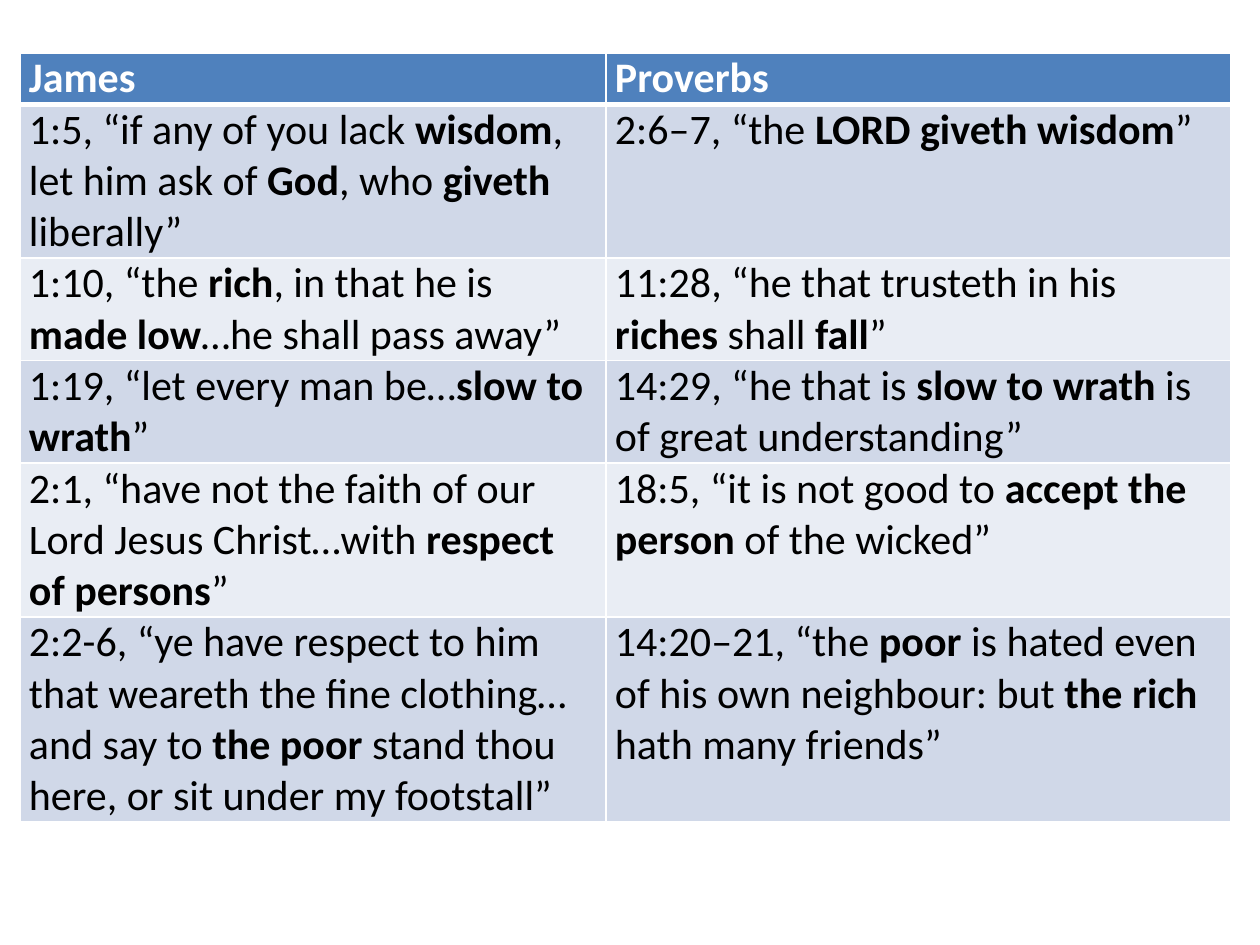
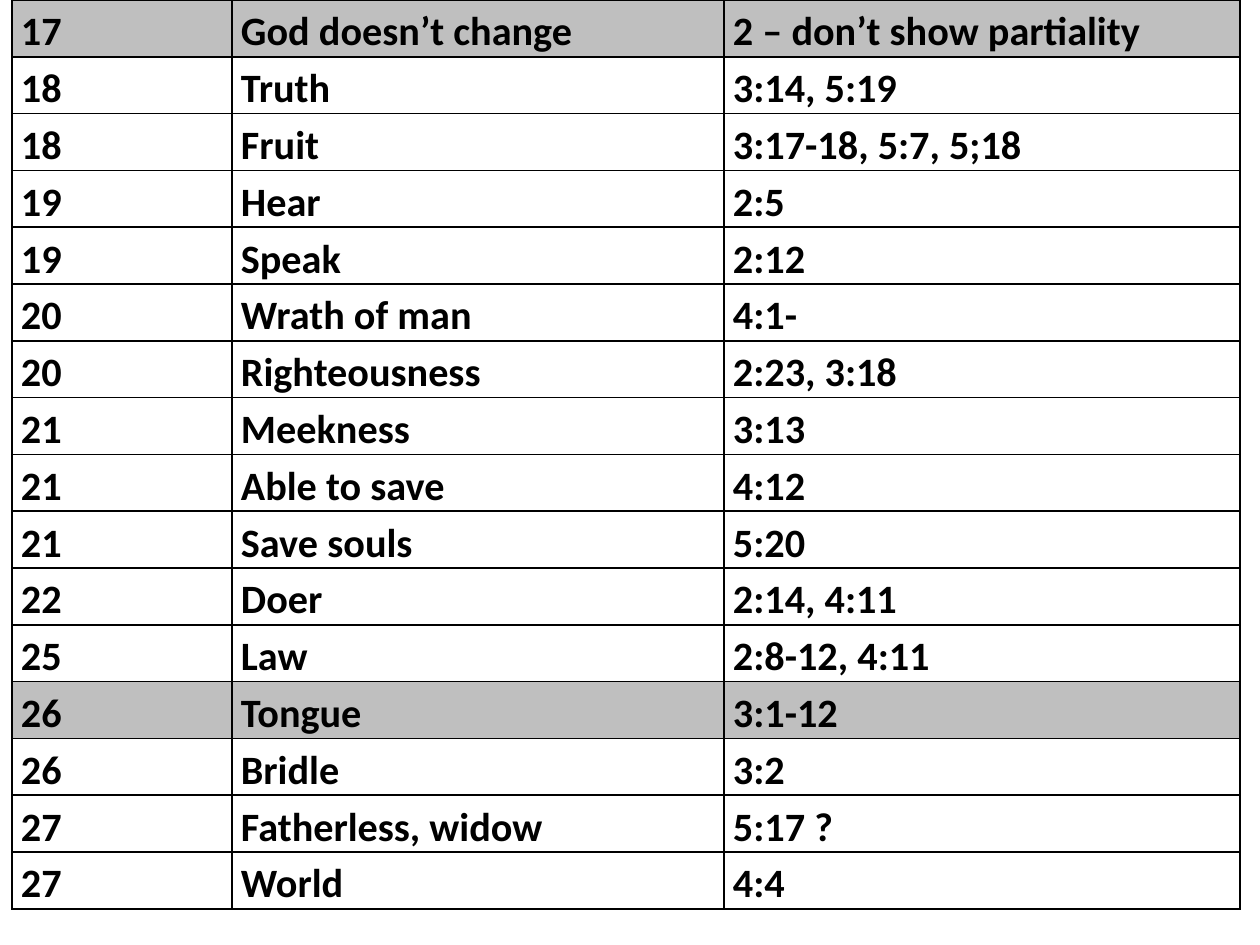
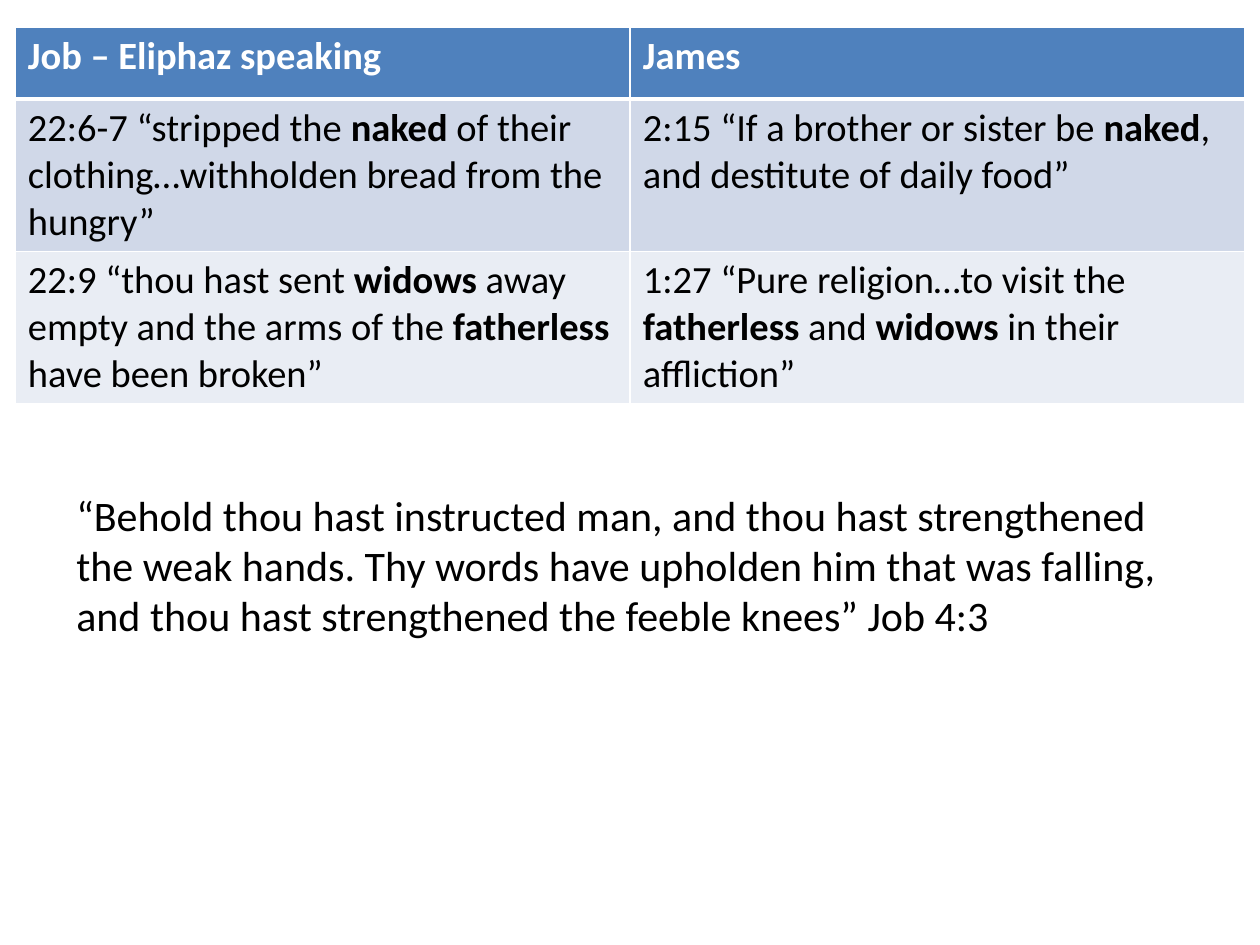
from dataclasses import dataclass

from lxml.etree import SubElement
from pptx import Presentation
from pptx.dml.color import RGBColor
from pptx.enum.text import MSO_AUTO_SIZE
from pptx.oxml.ns import qn
from pptx.util import Emu, Pt

PX_PER_INCH = 126
FONT = "Calibri"
BOLD_MARK = "*"

WHITE = RGBColor(0xFF, 0xFF, 0xFF)
BLACK = RGBColor(0x00, 0x00, 0x00)
HEADER_BLUE = RGBColor(0x4F, 0x81, 0xBD)
BAND_DARK = RGBColor(0xD0, 0xD8, 0xE8)
BAND_LIGHT = RGBColor(0xE9, 0xED, 0xF4)
HIGHLIGHT = RGBColor(0xBF, 0xBF, 0xBF)


@dataclass(frozen=True)
class RowLook:
    fill: RGBColor
    color: RGBColor = BLACK
    bold: bool = False
    top: int = 1
    bottom: int = 1


@dataclass(frozen=True)
class TableSpec:
    left: int
    top: int
    columns: list[int]
    heights: list[int]
    rows: list[tuple[str, ...]]
    looks: list[RowLook]
    border: RGBColor
    size: int
    side_margin: int = 9
    end_margin: int = 0
    line_spacing: float = 1.0
    has_header: bool = False


def px(length: int) -> Emu:
    return Emu(round(length * 914400 / PX_PER_INCH))


def write_text(paragraph, text: str, size: int, color: RGBColor, bold: bool = False) -> None:
    """Write text whose passages between asterisks are bold."""
    for index, passage in enumerate(text.split(BOLD_MARK)):
        if passage:
            span = paragraph.add_run()
            span.text = passage
            span.font.name = FONT
            span.font.size = Pt(size)
            span.font.color.rgb = color
            span.font.bold = bold or index % 2 == 1


def set_borders(cell, color: RGBColor, top: int, bottom: int) -> None:
    """Add border lines; call before filling, as the schema puts lines first."""
    properties = cell._tc.get_or_add_tcPr()
    for side, width in (("L", 1), ("R", 1), ("T", top), ("B", bottom)):
        line = SubElement(properties, qn(f"a:ln{side}"), w=str(Pt(width)))
        fill = SubElement(line, qn("a:solidFill"))
        SubElement(fill, qn("a:srgbClr"), val=str(color))


def draw_table(page, spec: TableSpec) -> None:
    frame = page.shapes.add_table(
        len(spec.rows), len(spec.columns), px(spec.left), px(spec.top),
        px(sum(spec.columns)), px(sum(spec.heights)))
    table = frame.table
    table.first_row = spec.has_header
    table.horz_banding = False
    for column, width in zip(table.columns, spec.columns):
        column.width = px(width)
    for row, height, texts, look in zip(table.rows, spec.heights, spec.rows, spec.looks):
        row.height = px(height)
        for cell, text in zip(row.cells, texts):
            cell.margin_left = cell.margin_right = px(spec.side_margin)
            cell.margin_top = cell.margin_bottom = px(spec.end_margin)
            set_borders(cell, spec.border, look.top, look.bottom)
            cell.fill.solid()
            cell.fill.fore_color.rgb = look.fill
            paragraph = cell.text_frame.paragraphs[0]
            paragraph.line_spacing = spec.line_spacing
            write_text(paragraph, text, spec.size, look.color, look.bold)


def banded_looks(row_count: int) -> list[RowLook]:
    """A blue header over a heavy rule, then alternating bands."""
    header = RowLook(HEADER_BLUE, WHITE, bold=True, bottom=3)
    bands = [RowLook(BAND_LIGHT if index % 2 else BAND_DARK, top=1 if index else 3)
             for index in range(row_count - 1)]
    return [header, *bands]


def draw_quote(page, text: str) -> None:
    box = page.shapes.add_textbox(px(64), px(483), px(1111), px(165))
    box.text_frame.word_wrap = True
    box.text_frame.auto_size = MSO_AUTO_SIZE.SHAPE_TO_FIT_TEXT
    write_text(box.text_frame.paragraphs[0], text, 24, BLACK)


PROVERBS_ROWS = [
    ("James", "Proverbs"),
    ("1:5, “if any of you lack *wisdom*, let him ask of *God*, who *giveth* liberally”",
     "2:6–7, “the *LORD giveth wisdom*”"),
    ("1:10, “the *rich*, in that he is *made low*…he shall pass away”",
     "11:28, “he that trusteth in his *riches* shall *fall*”"),
    ("1:19, “let every man be…*slow to wrath*”",
     "14:29, “he that is *slow to wrath* is of great understanding”"),
    ("2:1, “have not the faith of our Lord Jesus Christ…with *respect of persons*”",
     "18:5, “it is not good to *accept the person* of the wicked”"),
    ("2:2-6, “ye have respect to him that weareth the fine clothing…and say to "
     "*the poor* stand thou here, or sit under my footstall”",
     "14:20–21, “the* poor* is hated even of his own neighbour: but *the rich* "
     "hath many friends”"),
]
PROVERBS_LINES = [1, 3, 2, 2, 3, 4]

THEME_ROWS = [
    ("17", "God doesn’t change", "2 – don’t show partiality"),
    ("18", "Truth", "3:14, 5:19"),
    ("18", "Fruit", "3:17-18, 5:7, 5;18"),
    ("19", "Hear", "2:5"),
    ("19", "Speak", "2:12"),
    ("20", "Wrath of man", "4:1-"),
    ("20", "Righteousness", "2:23, 3:18"),
    ("21", "Meekness", "3:13"),
    ("21", "Able to save", "4:12"),
    ("21", "Save souls", "5:20"),
    ("22", "Doer", "2:14, 4:11"),
    ("25", "Law", "2:8-12, 4:11"),
    ("26", "Tongue", "3:1-12"),
    ("26", "Bridle", "3:2"),
    ("27", "Fatherless, widow", "5:17 ?"),
    ("27", "World", "4:4"),
]
HIGHLIGHTED_THEMES = {"God doesn’t change", "Tongue"}

JOB_ROWS = [
    ("Job – Eliphaz speaking", "James"),
    ("22:6-7 “stripped the *naked* of their clothing…withholden bread from the hungry”",
     "2:15 “If a brother or sister be *naked*, and destitute of daily food”"),
    ("22:9 “thou hast sent *widows* away empty and the arms of the *fatherless* "
     "have been broken”",
     "1:27 “Pure religion…to visit the *fatherless* and *widows* in their affliction”"),
]
JOB_QUOTE = (
    "“Behold thou hast instructed man, and thou hast strengthened the weak hands. "
    "Thy words have upholden him that was falling, and thou hast strengthened "
    "the feeble knees” Job 4:3")

TABLES = [
    TableSpec(20, 53, [586, 625], [51 * lines for lines in PROVERBS_LINES],
              PROVERBS_ROWS, banded_looks(len(PROVERBS_ROWS)), WHITE, 24,
              has_header=True),
    TableSpec(12, 0, [220, 492, 516], [56] * len(THEME_ROWS), THEME_ROWS,
              [RowLook(HIGHLIGHT if theme in HIGHLIGHTED_THEMES else WHITE, bold=True)
               for _, theme, _ in THEME_ROWS],
              BLACK, 23, line_spacing=1.15),
    TableSpec(15, 27, [615, 615], [72, 152, 152], JOB_ROWS,
              banded_looks(len(JOB_ROWS)), WHITE, 22,
              side_margin=13, end_margin=6, has_header=True),
]


def main() -> None:
    deck = Presentation()
    deck.slide_width, deck.slide_height = px(1260), px(945)
    blank_layout = deck.slide_layouts[6]
    for spec in TABLES:
        page = deck.slides.add_slide(blank_layout)
        draw_table(page, spec)
    draw_quote(page, JOB_QUOTE)
    deck.save("out.pptx")


if __name__ == "__main__":
    main()
